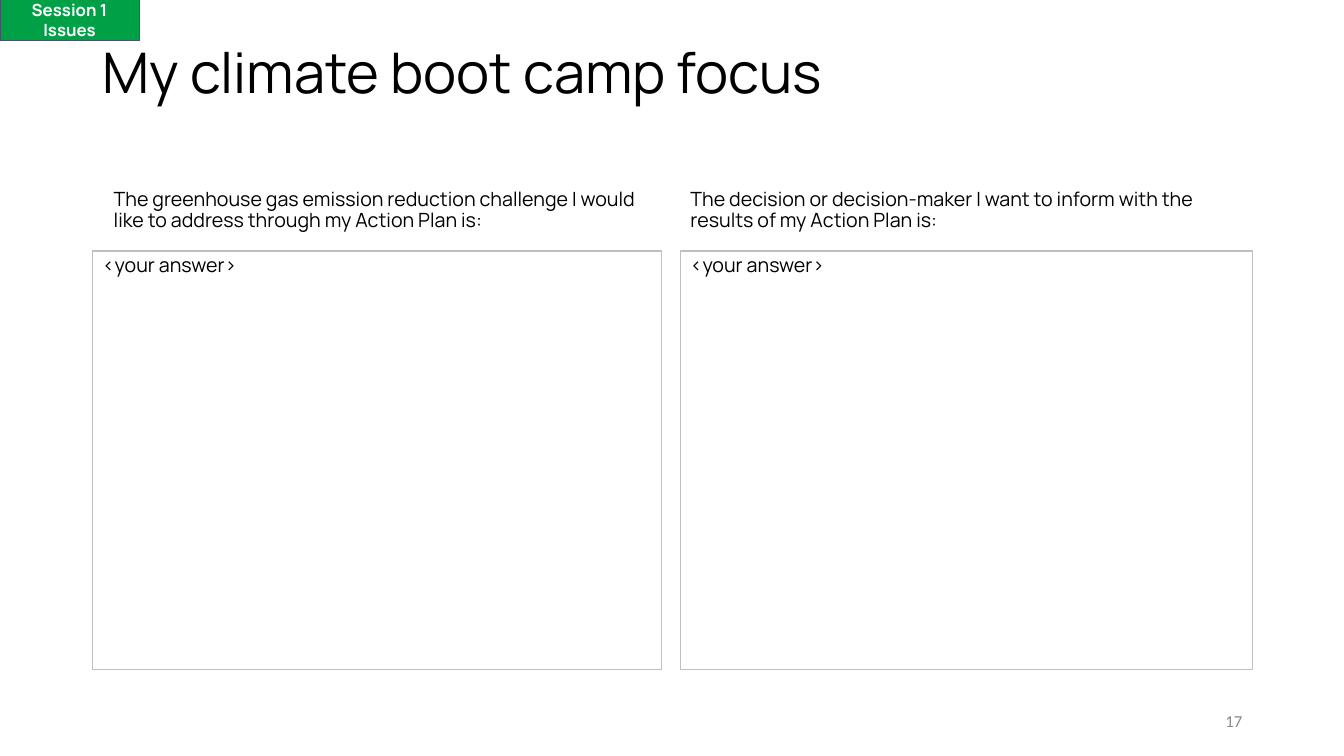
from pptx import Presentation
from pptx.dml.color import RGBColor
from pptx.enum.shapes import MSO_SHAPE as SHAPE
from pptx.enum.text import MSO_ANCHOR as ANCHOR, PP_ALIGN as ALIGN
from pptx.util import Inches, Pt

COLORS = {
    "text": "000000",
    "white": "FFFFFF",
    "green": "00A047",
    "tab_line": "44546A",
    "box_line": "BFBFBF",
    "number": "888888",
}
TITLE = {"size": Pt(40), "name": "Manrope"}
BODY = {"size": Pt(14), "name": "Manrope"}
TAB = {"size": Pt(12), "name": "Manrope", "bold": True}
NUMBER = {"size": Pt(12), "name": "Calibri"}
BODY_PARA = {"line_spacing": 0.9, "space_before": Pt(10)}


def rgb(key):
    return RGBColor.from_string(COLORS[key])


def set_all(target, values):
    for name, value in values.items():
        setattr(target, name, value)


def write(sp, lines, font, color="text", para=None, anchor=ANCHOR.TOP, pad_y=0.05):
    tf = sp.text_frame
    set_all(tf, {
        "word_wrap": True,
        "vertical_anchor": anchor,
        "margin_left": Inches(0.1),
        "margin_right": Inches(0.1),
        "margin_top": Inches(pad_y),
        "margin_bottom": Inches(pad_y),
    })
    for i, line in enumerate(lines):
        p = tf.add_paragraph() if i else tf.paragraphs[0]
        set_all(p, {"alignment": ALIGN.LEFT, **(para or {})})
        r = p.add_run()
        r.text = line
        set_all(r.font, font)
        r.font.color.rgb = rgb(color)


def add_text(s, x, y, w, h, *args, **kwargs):
    sp = s.shapes.add_textbox(Inches(x), Inches(y), Inches(w), Inches(h))
    write(sp, *args, **kwargs)


def add_rect(s, x, y, w, h, fill, line):
    sp = s.shapes.add_shape(SHAPE.RECTANGLE, Inches(x), Inches(y), Inches(w), Inches(h))
    sp.shadow.inherit = False
    sp.fill.solid()
    sp.fill.fore_color.rgb = rgb(fill)
    sp.line.color.rgb = rgb(line)
    sp.line.width = Pt(0.75)
    return sp


def add_title(s, x, y, w, h):
    add_text(s, x, y, w, h, ["My climate boot camp focus"], TITLE,
             para={"line_spacing": 0.9})


def add_answer_column(s, x, y, w, h, prompt, indent=0):
    prompt_h, box_top = 0.73, 0.87
    add_text(s, x + indent, y, w, prompt_h, [prompt], BODY,
             para=BODY_PARA, anchor=ANCHOR.BOTTOM)
    box = add_rect(s, x, y + box_top, w, h - box_top, "white", "box_line")
    write(box, ["<your answer>"], BODY, para=BODY_PARA)


def add_page_number(s, x, y, w, h):
    add_text(s, x, y, w, h, ["17"], NUMBER, "number",
             para={"alignment": ALIGN.RIGHT}, anchor=ANCHOR.MIDDLE)


def add_session_tab(s, x, y, w, h):
    tab = add_rect(s, x, y, w, h, "green", "tab_line")
    write(tab, ["Session 1", "Issues"], TAB, "white",
          para={"alignment": ALIGN.CENTER}, anchor=ANCHOR.MIDDLE, pad_y=0.1)


def main():
    prs = Presentation()
    prs.slide_width, prs.slide_height = Inches(13.33), Inches(7.5)
    s = prs.slides.add_slide(prs.slide_layouts[6])
    add_title(s, 0.92, 0.4, 11.5, 1.45)
    add_answer_column(
        s, 0.92, 1.62, 5.64, 5.02,
        "The greenhouse gas emission reduction challenge I would like to "
        "address through my Action Plan is:", indent=0.11)
    add_answer_column(
        s, 6.75, 1.62, 5.67, 5.02,
        "The decision or decision-maker I want to inform with the results "
        "of my Action Plan is:")
    add_page_number(s, 9.42, 6.95, 3, 0.4)
    add_session_tab(s, 0, 0, 1.38, 0.4)
    prs.save("out.pptx")


if __name__ == "__main__":
    main()
